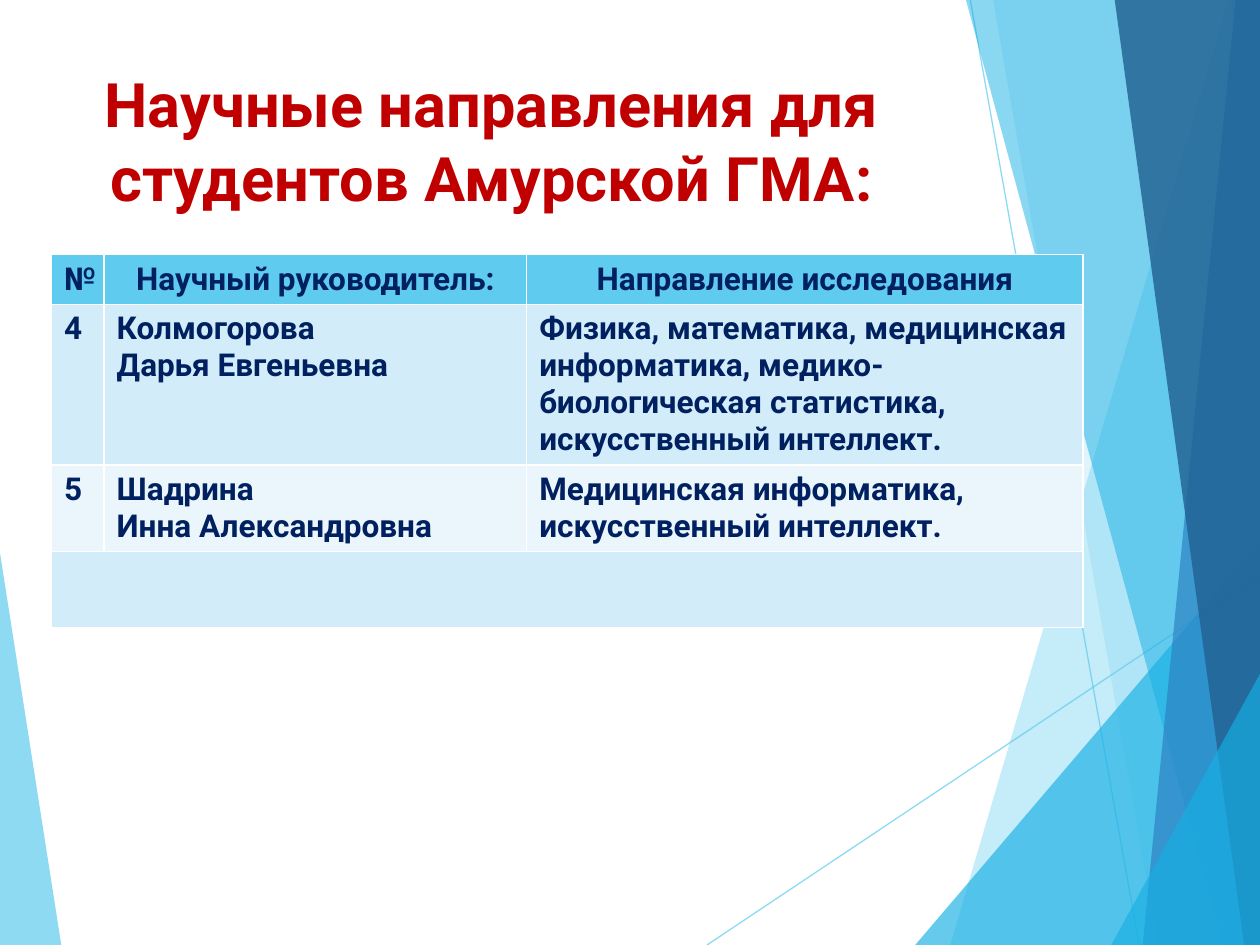
import pptx
import pptx.util
import pptx.dml.color
import pptx.enum.shapes
import pptx.enum.text
import pptx.oxml
import pptx.oxml.ns

Pt = pptx.util.Pt
RGBColor = pptx.dml.color.RGBColor
ALIGN = pptx.enum.text.PP_ALIGN

SKY = RGBColor(0x5F, 0xCB, 0xEF)
CYAN = RGBColor(0x17, 0xB0, 0xE4)
BLUE = RGBColor(0x2E, 0x83, 0xC3)
DEEP = RGBColor(0x22, 0x62, 0x92)
NAVY = RGBColor(0x00, 0x20, 0x60)
RED = RGBColor(0xC0, 0x00, 0x00)
PALE = RGBColor(0xD2, 0xEC, 0xF9)
LIGHT = RGBColor(0xEA, 0xF6, 0xFC)
FONT = "Roboto"


def fade(fill, color, alpha):
    fill.solid()
    fill.fore_color.rgb = color
    node = fill.fore_color._xFill[0]
    tag = pptx.oxml.ns.qn("a:alpha")
    node.append(node.makeelement(tag, {"val": str(alpha * 1000)}))


def style(para, size, color, align):
    para.alignment = align
    para.font.name = FONT
    para.font.size = Pt(size)
    para.font.bold = True
    para.font.color.rgb = color


deck = pptx.Presentation()
deck.slide_width, deck.slide_height = Pt(720), Pt(540)
slide = deck.slides.add_slide(deck.slide_layouts[5])
shapes = slide.shapes

for start, end in [((404, 540), (720, 329)), ((554.5, 0), (651, 540))]:
    line = shapes.add_connector(
        pptx.enum.shapes.MSO_CONNECTOR.STRAIGHT,
        *[Pt(value) for value in start + end])
    line.line.width = Pt(0.75)
    fade(line.line.fill, SKY, 70)
    props = line._element.spPr
    props.append(props.makeelement(pptx.oxml.ns.qn("a:effectLst"), {}))

facets = [
    ([(0, 316), (35, 540), (0, 540)], SKY, 70),
    ([(702, 0), (543, 540), (720, 540), (720, 0)], SKY, 36),
    ([(567.5, 0), (661.5, 540), (720, 540), (720, 0)], SKY, 20),
    ([(523, 540), (720, 309), (720, 540)], CYAN, 66),
    ([(552, 0), (698.5, 540), (720, 540), (720, 0)], CYAN, 50),
    ([(706, 0), (653, 540), (720, 540), (720, 0)], BLUE, 70),
    ([(637, 0), (711, 540), (720, 540), (720, 0)], DEEP, 82),
    ([(635, 540), (720, 385), (720, 540)], CYAN, 66),
]
for points, color, alpha in facets:
    points = [(Pt(x), Pt(y)) for x, y in points]
    path = shapes.build_freeform(*points[0])
    path.add_line_segments(points[1:], close=True)
    facet = path.convert_to_shape()
    facet.shadow.inherit = False
    facet.line.fill.background()
    fade(facet.fill, color, alpha)

title = shapes.title
title.left, title.top = Pt(31), Pt(31.5)
title.width, title.height = Pt(500), Pt(104)
frame = title.text_frame
frame.text = "Научные направления для студентов Амурской ГМА:"
frame.word_wrap = True
frame.auto_size = pptx.enum.text.MSO_AUTO_SIZE.NONE
frame.vertical_anchor = pptx.enum.text.MSO_ANCHOR.TOP
frame.margin_top = Pt(6.5)
style(frame.paragraphs[0], 35, RED, ALIGN.CENTER)

rows = [
    ("№", "Научный руководитель:", "Направление исследования"),
    ("4", "Колмогорова\nДарья Евгеньевна",
     "Физика, математика, медицинская информатика, "
     "медико-биологическая статистика, искусственный интеллект."),
    ("5", "Шадрина\nИнна Александровна",
     "Медицинская информатика, искусственный интеллект."),
    ("", "", ""),
]
widths = [30, 241.5, 318]
heights = [28.5, 91.5, 49.5, 43.5]
fills = [SKY, PALE, LIGHT, PALE]

table = shapes.add_table(len(rows), len(widths), Pt(29.5), Pt(145.5),
                         Pt(sum(widths)), Pt(sum(heights))).table
table.horz_banding = False
for column, width in zip(table.columns, widths):
    column.width = Pt(width)
for index, (row, texts) in enumerate(zip(table.rows, rows)):
    row.height = Pt(heights[index])
    for cell, text in zip(row.cells, texts):
        cell.fill.solid()
        cell.fill.fore_color.rgb = fills[index]
        cell.text = text
        for para in cell.text_frame.paragraphs:
            style(para, 18, NAVY, ALIGN.LEFT if index else ALIGN.CENTER)
table.cell(3, 0).merge(table.cell(3, 2))

deck.save("out.pptx")
